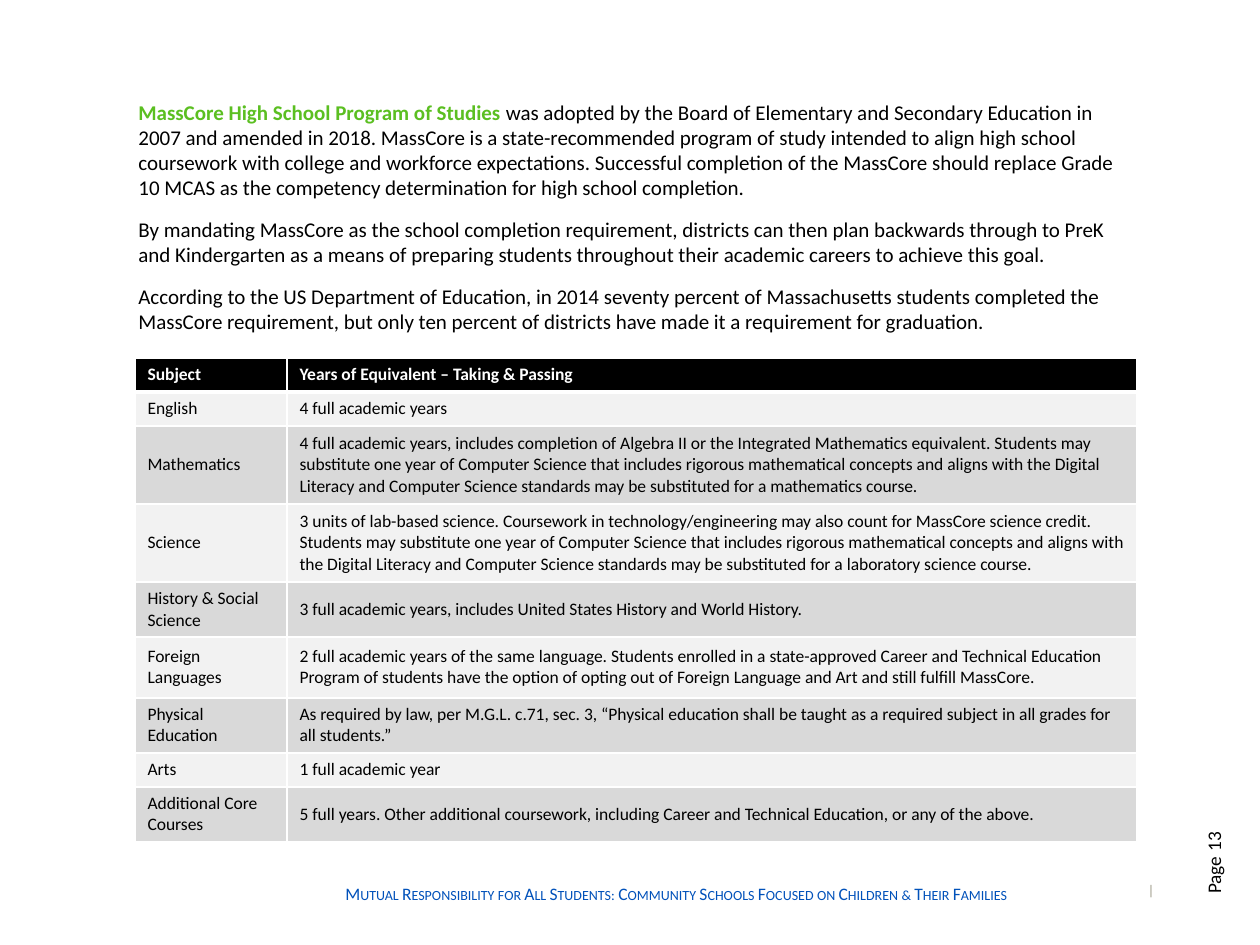
from lxml.etree import SubElement
from pptx import Presentation
from pptx.dml.color import RGBColor
from pptx.enum.text import MSO_ANCHOR, PP_ALIGN
from pptx.oxml.ns import qn
from pptx.util import Emu, Pt

PX_PER_INCH = 126
FONT = "Calibri"
BLACK, WHITE = "000000", "FFFFFF"
GREEN, BLUE, GREY = "5BBF21", "0051BA", "999683"
BANDS = ("F2F2F2", "D9D9D9")

INTRO = [
    [("MassCore High School Program of Studies ", {"bold": True, "color": GREEN}),
     ("was adopted by the Board of Elementary and Secondary Education in 2007 and "
      "amended in 2018. MassCore is a state-recommended program of study intended to "
      "align high school coursework with college and workforce expectations. Successful "
      "completion of the MassCore should replace Grade 10 MCAS as the competency "
      "determination for high school completion.", {})],
    [("By mandating MassCore as the school completion requirement, districts can then plan "
      "backwards through to PreK and Kindergarten as a means of preparing students "
      "throughout their academic careers to achieve this goal.", {})],
    [("According to the US Department of Education, in 2014 seventy percent of "
      "Massachusetts students completed the MassCore requirement, but only ten percent of "
      "districts have made it a requirement for graduation.", {})],
]

# Subject, requirement, row height in px
REQUIREMENTS = [
    ("Subject", "Years of Equivalent – Taking & Passing", 34),
    ("English", "4 full academic years", 34),
    ("Mathematics",
     "4 full academic years, includes completion of Algebra II or the Integrated "
     "Mathematics equivalent. Students may substitute one year of Computer Science that "
     "includes rigorous mathematical concepts and aligns with the Digital Literacy and "
     "Computer Science standards may be substituted for a mathematics course.", 78),
    ("Science",
     "3 units of lab-based science. Coursework in technology/engineering may also count "
     "for MassCore science credit. Students may substitute one year of Computer Science "
     "that includes rigorous mathematical concepts and aligns with the Digital Literacy "
     "and Computer Science standards may be substituted for a laboratory science course.",
     78),
    ("History & Social Science",
     "3 full academic years, includes United States History and World History.", 55),
    ("Foreign Languages",
     "2 full academic years of the same language. Students enrolled in a state-approved "
     "Career and Technical Education Program of students have the option of opting out of "
     "Foreign Language and Art and still fulfill MassCore.", 61),
    ("Physical Education",
     "As required by law, per M.G.L. c.71, sec. 3, “Physical education shall be taught as "
     "a required subject in all grades for all students.”", 55),
    ("Arts", "1 full academic year", 34),
    ("Additional Core Courses",
     "5 full years. Other additional coursework, including Career and Technical "
     "Education, or any of the above.", 55),
]


def px(length):
    return Emu(round(length * 914400 / PX_PER_INCH))


def rgb(hex_color):
    return RGBColor.from_string(hex_color)


def write(paragraph, text, size=10, color=BLACK, bold=False, small_caps=False):
    run = paragraph.add_run()
    run.text = text
    run.font.name = FONT
    run.font.size = Pt(size)
    run.font.bold = bold
    run.font.color.rgb = rgb(color)
    if small_caps:
        run.font._element.set("cap", "small")


def add_frame(slide, box, rotation=0, tight=False):
    """Text box; a tight one has no insets and does not wrap."""
    holder = slide.shapes.add_textbox(*map(px, box))
    holder.rotation = rotation
    frame = holder.text_frame
    frame.word_wrap = not tight
    if tight:
        frame.margin_left = frame.margin_right = 0
        frame.margin_top = frame.margin_bottom = 0
    return frame


def add_intro(slide, box):
    frame = add_frame(slide, box)
    for index, runs in enumerate(INTRO):
        paragraph = frame.add_paragraph() if index else frame.paragraphs[0]
        paragraph.space_after = Pt(9.5)
        for text, style in runs:
            write(paragraph, text, size=12, **style)


def set_borders(cell, top=1, bottom=1):
    properties = cell._tc.get_or_add_tcPr()
    for side, width in (("L", 1), ("R", 1), ("T", top), ("B", bottom)):
        line = SubElement(properties, qn(f"a:ln{side}"), w=str(Pt(width)))
        SubElement(SubElement(line, qn("a:solidFill")), qn("a:srgbClr"), val=WHITE)


def add_requirements(slide, box, subject_width):
    table = slide.shapes.add_table(len(REQUIREMENTS), 2, *map(px, box)).table
    table.columns[0].width = px(subject_width)
    table.columns[1].width = px(box[2] - subject_width)
    for index, (subject, requirement, height) in enumerate(REQUIREMENTS):
        header = index == 0
        table.rows[index].height = px(height)
        for cell, text in zip(table.rows[index].cells, (subject, requirement)):
            # Borders precede the fill in the cell's XML
            set_borders(cell, top=3 if index == 1 else 1, bottom=3 if header else 1)
            cell.fill.solid()
            cell.fill.fore_color.rgb = rgb(BLACK if header else BANDS[(index - 1) % 2])
            cell.vertical_anchor = MSO_ANCHOR.TOP if header else MSO_ANCHOR.MIDDLE
            write(cell.text_frame.paragraphs[0], text,
                  color=WHITE if header else BLACK, bold=header)


def add_footer(slide, box):
    left, top, width, height = box
    # Running title
    title = add_frame(slide, (left, top, width, height)).paragraphs[0]
    title.line_spacing = 0.9
    write(title, "Mutual Responsibility for All Students: Community Schools Focused on "
                 "Children & Their Families", color=BLUE, small_caps=True)
    # Divider mark
    divider = add_frame(slide, (left + 815, top + 3, 4, 16), tight=True).paragraphs[0]
    divider.alignment = PP_ALIGN.RIGHT
    write(divider, "|", size=8, color=GREY)
    # Page number, reading upwards
    page = add_frame(slide, (left + 845, top - 29, 67, 30), 270, tight=True).paragraphs[0]
    page.alignment = PP_ALIGN.RIGHT
    for text, size in (("Page", 11), (" ", 14), ("13", 11)):
        write(page, text, size=size)


def main():
    deck = Presentation()
    deck.slide_width, deck.slide_height = px(1260), px(945)
    slide = deck.slides.add_slide(deck.slide_layouts[6])
    add_intro(slide, (126, 93, 1012, 243))
    add_requirements(slide, (135, 358, 1002, 484), subject_width=152)
    add_footer(slide, (333, 879, 800, 57))
    deck.save("out.pptx")


if __name__ == "__main__":
    main()
